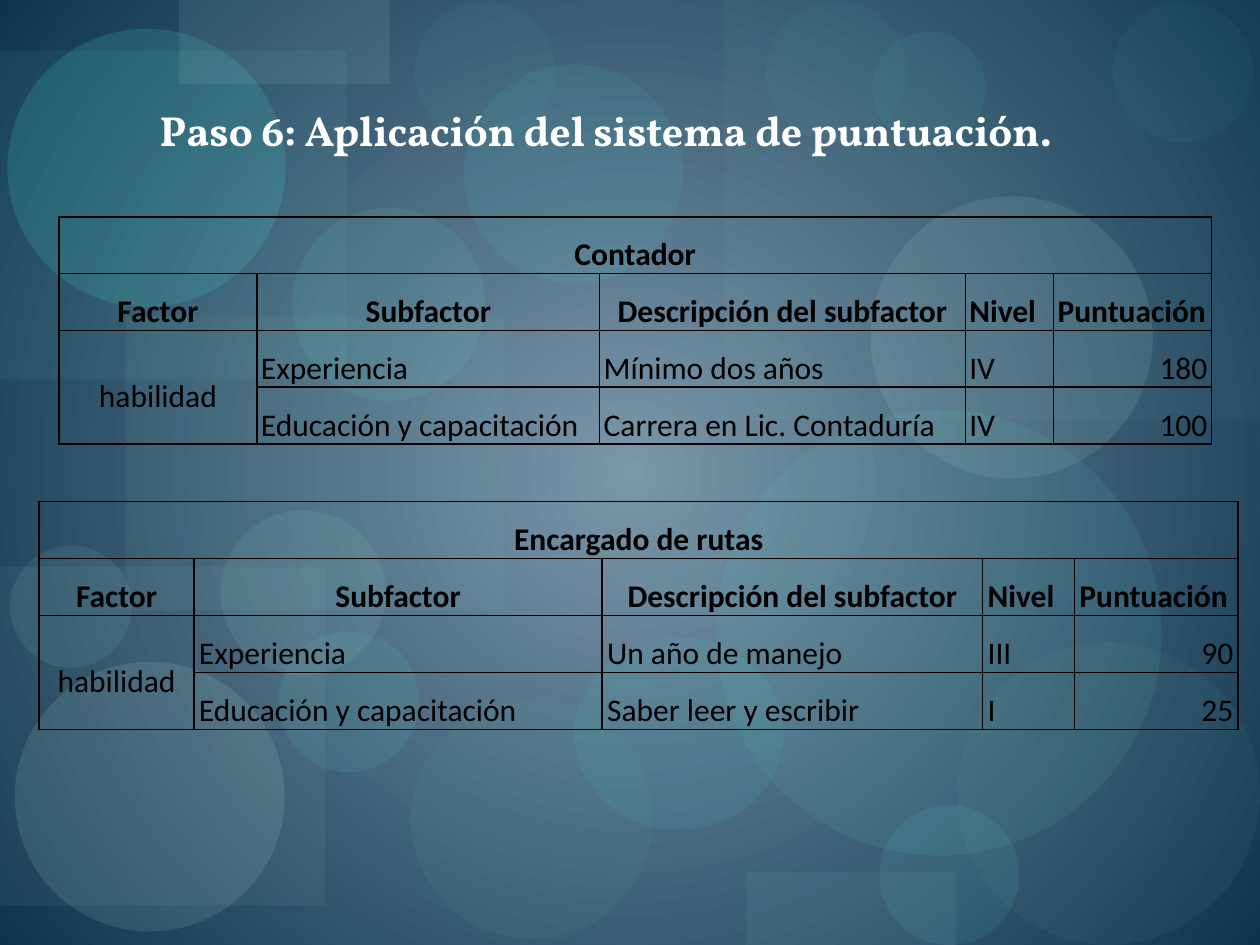
from lxml.etree import SubElement
from pptx import Presentation
from pptx.dml.color import RGBColor
from pptx.enum.shapes import MSO_SHAPE
from pptx.enum.text import MSO_ANCHOR, MSO_AUTO_SIZE, PP_ALIGN
from pptx.oxml import parse_xml
from pptx.oxml.ns import nsdecls, qn
from pptx.util import Cm, Pt


def color(code):
    return RGBColor.from_string(code)


def add_borders(cell):
    properties = cell._tc.get_or_add_tcPr()
    for side in ("lnL", "lnR", "lnT", "lnB"):
        properties.append(parse_xml(
            f'<a:{side} {nsdecls("a")} w="12700"><a:solidFill>'
            f'<a:srgbClr val="000000"/></a:solidFill></a:{side}>'))


deck = Presentation()
deck.slide_width, deck.slide_height = Cm(25.4), Cm(19.05)
page = deck.slides.add_slide(deck.slide_layouts[6])

# Background: gradient spreading from the centre
background = page.background.fill
background.gradient()
for stop, code, position in zip(background.gradient_stops, ("7B96AA", "0E354D"), (0, 1)):
    stop.color.rgb = color(code)
    stop.position = position
gradient = page.background._cSld.find(".//" + qn("a:gradFill"))
gradient.replace(gradient.find(qn("a:lin")), parse_xml(
    f'<a:path {nsdecls("a")} path="circle">'
    '<a:fillToRect l="50000" t="50000" r="50000" b="50000"/></a:path>'))

# Translucent decoration: kind, left, top, width, height, colour, opacity in percent
RECT, OVAL = MSO_SHAPE.RECTANGLE, MSO_SHAPE.OVAL
decorations = [
    (RECT, 2.54, 6.38, 7.62, 5.92, "79B5B0", 9),
    (OVAL, 8.28, 14.1, 4.88, 4.83, "549791", 13),
    (RECT, 14.6, 0, 10.8, 8.46, "79B5B0", 6),
    (RECT, 0, 11.43, 6.55, 6.83, "B2B7BA", 8),
    (OVAL, 11.61, 6.63, 6.05, 6.05, "70A39E", 8),
    (OVAL, 17.73, 16.23, 2.82, 2.82, "65E8DC", 9),
    (OVAL, 17.55, 3.96, 5.69, 5.69, "C1E8E4", 11),
    (OVAL, 0.3, 13.34, 5.44, 5.44, "C1E8E4", 12),
    (OVAL, 5.61, 12.73, 2.84, 2.84, "65E8DC", 9),
    (OVAL, 11.58, 12.85, 4.22, 3.89, "44EADC", 8),
    (RECT, 0, 1.02, 6.99, 6.63, "77D6CE", 7),
    (RECT, 3.61, 0, 4.24, 1.7, "BED7D4", 10),
    (OVAL, 0.15, 0.58, 5.61, 5.61, "44EADC", 15),
    (OVAL, 0.2, 11, 2.46, 2.46, "97DCD6", 10),
    (OVAL, 5.89, 4.19, 3.89, 3.89, "65E8DC", 9),
    (OVAL, 9.35, 1.3, 4.42, 4.42, "44EADC", 8),
    (OVAL, 14.43, 8.26, 8.99, 8.99, "61CDC4", 10),
    (OVAL, 15.44, 0.03, 2.84, 2.84, "65E8DC", 4),
    (OVAL, 19.3, 12.95, 6.1, 6.1, "70A39E", 8),
    (OVAL, 4.45, 10.29, 3.33, 3.33, "97DCD6", 10),
    (OVAL, 17.58, 0.64, 2.29, 2.29, "65E8DC", 6),
    (OVAL, 22.43, 0.03, 2.84, 2.84, "65E8DC", 4),
    (RECT, 15.04, 17.58, 4.24, 1.47, "79B5B0", 10),
    (OVAL, 8.36, 0.03, 2.84, 2.84, "65E8DC", 4),
]
for kind, left, top, width, height, code, opacity in decorations:
    shape = page.shapes.add_shape(kind, Cm(left), Cm(top), Cm(width), Cm(height))
    shape.shadow.inherit = False
    shape.line.fill.background()
    shape.fill.solid()
    shape.fill.fore_color.rgb = color(code)
    fill_color = shape._element.spPr.find(".//" + qn("a:srgbClr"))
    SubElement(fill_color, qn("a:alpha"), val=str(opacity * 1000))

# Title
title = page.shapes.add_textbox(Cm(2.97), Cm(1.98), Cm(19), Cm(1.27))
title.text_frame.word_wrap = False
title.text_frame.auto_size = MSO_AUTO_SIZE.SHAPE_TO_FIT_TEXT
para = title.text_frame.paragraphs[0]
para.text = "Paso 6: Aplicación del sistema de puntuación."
para.font.name, para.font.size, para.font.bold = "Vollkorn", Pt(24), True
para.font.color.rgb = color("FFFFFF")

# Scoring tables: job, left, top, row height, side margin, column widths, scores
header = ["Factor", "Subfactor", "Descripción del subfactor", "Nivel", "Puntuación"]
jobs = [
    ("Contador", 1.19, 4.37, 1.14, 0.08, [3.99, 6.91, 7.37, 1.78, 3.18],
     [["Mínimo dos años", "IV", "180"],
      ["Carrera en Lic. Contaduría", "IV", "100"]]),
    ("Encargado de rutas", 0.79, 10.11, 1.15, 0.1, [3.12, 8.23, 7.67, 1.85, 3.3],
     [["Un año de manejo", "III", "90"],
      ["Saber leer y escribir", "I", "25"]]),
]
for job, left, top, row_height, margin, widths, scores in jobs:
    rows = [
        [job, "", "", "", ""],
        header,
        ["habilidad", "Experiencia", *scores[0]],
        ["", "Educación y capacitación", *scores[1]],
    ]
    table = page.shapes.add_table(
        len(rows), len(header), Cm(left), Cm(top),
        Cm(sum(widths)), Cm(row_height * len(rows))).table
    table.first_row = table.horz_banding = False
    for column, width in zip(table.columns, widths):
        column.width = Cm(width)
    for i, texts in enumerate(rows):
        table.rows[i].height = Cm(row_height)
        for j, text in enumerate(texts):
            cell = table.cell(i, j)
            add_borders(cell)
            cell.fill.background()
            cell.vertical_anchor = MSO_ANCHOR.MIDDLE
            cell.margin_left = cell.margin_right = Cm(margin)
            cell.margin_top = cell.margin_bottom = 0
            para = cell.text_frame.paragraphs[0]
            para.text = text
            para.line_spacing = 1.5
            para.font.name, para.font.size = "Calibri", Pt(18)
            para.font.bold = i < 2
            para.font.color.rgb = color("000000")
            if j == 0 or (i == 1 and j < 3):
                para.alignment = PP_ALIGN.CENTER
            elif i > 1 and j == 4:
                para.alignment = PP_ALIGN.RIGHT
            else:
                para.alignment = PP_ALIGN.LEFT
    table.cell(0, 0).merge(table.cell(0, 4))
    table.cell(2, 0).merge(table.cell(3, 0))

deck.save("out.pptx")
